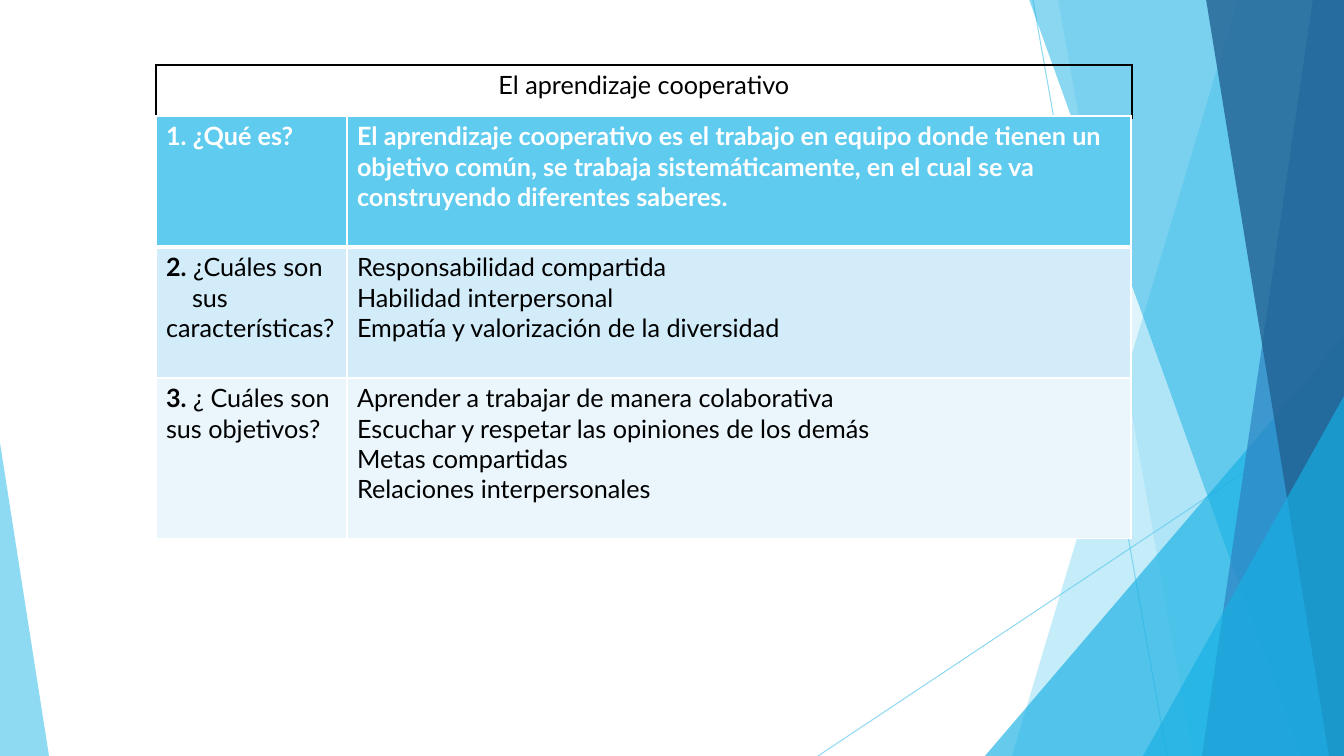
"""Build a slide with two tables on cooperative learning over a faceted blue backdrop."""
import pptx
import pptx.dml.color
import pptx.enum.shapes
import pptx.enum.text
import pptx.oxml
import pptx.oxml.ns
import pptx.util

PX = 914400 / 100.8
WIDTH, HEIGHT = 1344, 756
THEME = {
    "font": "Lato", "size": 18, "black": "000000", "white": "FFFFFF",
    "sky": "5FCBEF", "cyan": "17B0E4", "blue": "2E83C3", "navy": "226292",
    "band": "D2ECF9", "pale": "EAF6FC",
}


def paint(color_format, name, opacity=100):
    """Apply a theme colour and an opacity in percent."""
    color_format.rgb = pptx.dml.color.RGBColor.from_string(THEME[name])
    if opacity < 100:
        color = color_format._xFill.find(pptx.oxml.ns.qn("a:srgbClr"))
        color.append(pptx.oxml.parse_xml(
            f'<a:alpha {pptx.oxml.ns.nsdecls("a")} val="{opacity * 1000}"/>'))


def fill_cell(cell, paragraphs, text_color, fill_color, border_color, edges):
    """Write bold/regular runs into a cell and set its fill and borders."""
    if fill_color:
        cell.fill.solid()
        paint(cell.fill.fore_color, fill_color)
    else:
        cell.fill.background()
    for index, runs in enumerate(paragraphs):
        frame = cell.text_frame
        paragraph = frame.add_paragraph() if index else frame.paragraphs[0]
        for text, bold in runs:
            run = paragraph.add_run()
            run.text = text
            font_format = {"name": THEME["font"], "bold": bold,
                           "size": pptx.util.Pt(THEME["size"])}
            for attribute, value in font_format.items():
                setattr(run.font, attribute, value)
            paint(run.font.color, text_color)
    for index, (side, points) in enumerate(zip("LRTB", edges)):
        cell._tc.get_or_add_tcPr().insert(index, pptx.oxml.parse_xml(
            f'<a:ln{side} {pptx.oxml.ns.nsdecls("a")} w="{points * 12700}"><a:solidFill>'
            f'<a:srgbClr val="{THEME[border_color]}"/></a:solidFill></a:ln{side}>'))


presentation = pptx.Presentation()
presentation.slide_width = round(WIDTH * PX)
presentation.slide_height = round(HEIGHT * PX)
slide = presentation.slides.add_slide(presentation.slide_layouts[6])

for ends in [(1033, 0, 1167, HEIGHT), (WIDTH, 406, 818, HEIGHT)]:
    connector = slide.shapes.add_connector(
        pptx.enum.shapes.MSO_CONNECTOR.STRAIGHT, *[round(value * PX) for value in ends])
    connector.line.width = pptx.util.Pt(0.75)
    connector.line.fill.solid()
    paint(connector.line.fill.fore_color, "sky", 70)
    connector._element.spPr.append(
        pptx.oxml.parse_xml(f'<a:effectLst {pptx.oxml.ns.nsdecls("a")}/>'))

facets = [
    ("band", (1238, 1012), "sky", 36),
    ("band", (1058, 1193), "sky", 20),
    ("triangle", (985, 336, 359, 420, 1), "cyan", 66),
    ("band", (1029, 1301), "cyan", 50),
    ("band", (1313, 1202), "blue", 70),
    ("band", (1206, 1329), "navy", 80),
    ("triangle", (1143, 396, 201, 360, 1), "cyan", 66),
    ("triangle", (0, 443, 49, 313, 0), "sky", 70),
]
for kind, geometry, color, opacity in facets:
    if kind == "band":
        top_x, bottom_x = geometry
        builder = slide.shapes.build_freeform(top_x, -1, scale=PX)
        builder.add_line_segments([(WIDTH, -1), (WIDTH, HEIGHT), (bottom_x, HEIGHT)])
        shape = builder.convert_to_shape()
    else:
        *box, apex = geometry
        shape = slide.shapes.add_shape(
            pptx.enum.shapes.MSO_SHAPE.ISOSCELES_TRIANGLE, *[round(value * PX) for value in box])
        shape.adjustments[0] = apex
    shape.shadow.inherit = False
    shape.fill.solid()
    paint(shape.fill.fore_color, color, opacity)
    shape.line.fill.background()

heading_rows = [
    (53, None, "black", "black", (1, 1), [[[("El aprendizaje cooperativo", False)]]]),
]
question_rows = [
    (131, "sky", "white", "white", (1, 3), [
        [[("1. ¿Qué es?", True)]],
        [[("El aprendizaje cooperativo es el trabajo en equipo donde tienen un objetivo común, "
           "se trabaja sistemáticamente, en el cual se va construyendo diferentes saberes.", True)]],
    ]),
    (131, "band", "black", "white", (3, 1), [
        [[("2.", True), (" ¿Cuáles son", False)], [("sus características?", False)]],
        [[("Responsabilidad compartida", False)],
         [("Habilidad interpersonal", False)],
         [("Empatía y valorización de la diversidad", False)]],
    ]),
    (161, "pale", "black", "white", (1, 1), [
        [[("3.", True), (" ¿ Cuáles son sus objetivos?", False)]],
        [[("Aprender a trabajar de manera colaborativa", False)],
         [("Escuchar y respetar las opiniones de los demás", False)],
         [("Metas compartidas", False)],
         [("Relaciones interpersonales", False)]],
    ]),
]
tables = []
for top, column_widths, rows in [(65, [976], heading_rows), (116, [191, 784], question_rows)]:
    box = (156, top, sum(column_widths), sum(row[0] for row in rows))
    table = slide.shapes.add_table(
        len(rows), len(column_widths), *[round(value * PX) for value in box]).table
    table.first_row = table.horz_banding = False
    for column, width in zip(table.columns, column_widths):
        column.width = round(width * PX)
    for row, (height, fill_color, text_color, border_color, edges, texts) in zip(table.rows, rows):
        row.height = round(height * PX)
        for cell, paragraphs in zip(row.cells, texts):
            fill_cell(cell, paragraphs, text_color, fill_color, border_color, (1, 1, *edges))
    tables.append(table)

heading_table, question_table = tables
heading_table.cell(0, 0).text_frame.paragraphs[0].alignment = pptx.enum.text.PP_ALIGN.CENTER
indented_paragraph = question_table.cell(1, 0).text_frame.paragraphs[1]
indented_paragraph._p.get_or_add_pPr().set("indent", str(round(26 * PX)))

presentation.save("out.pptx")
